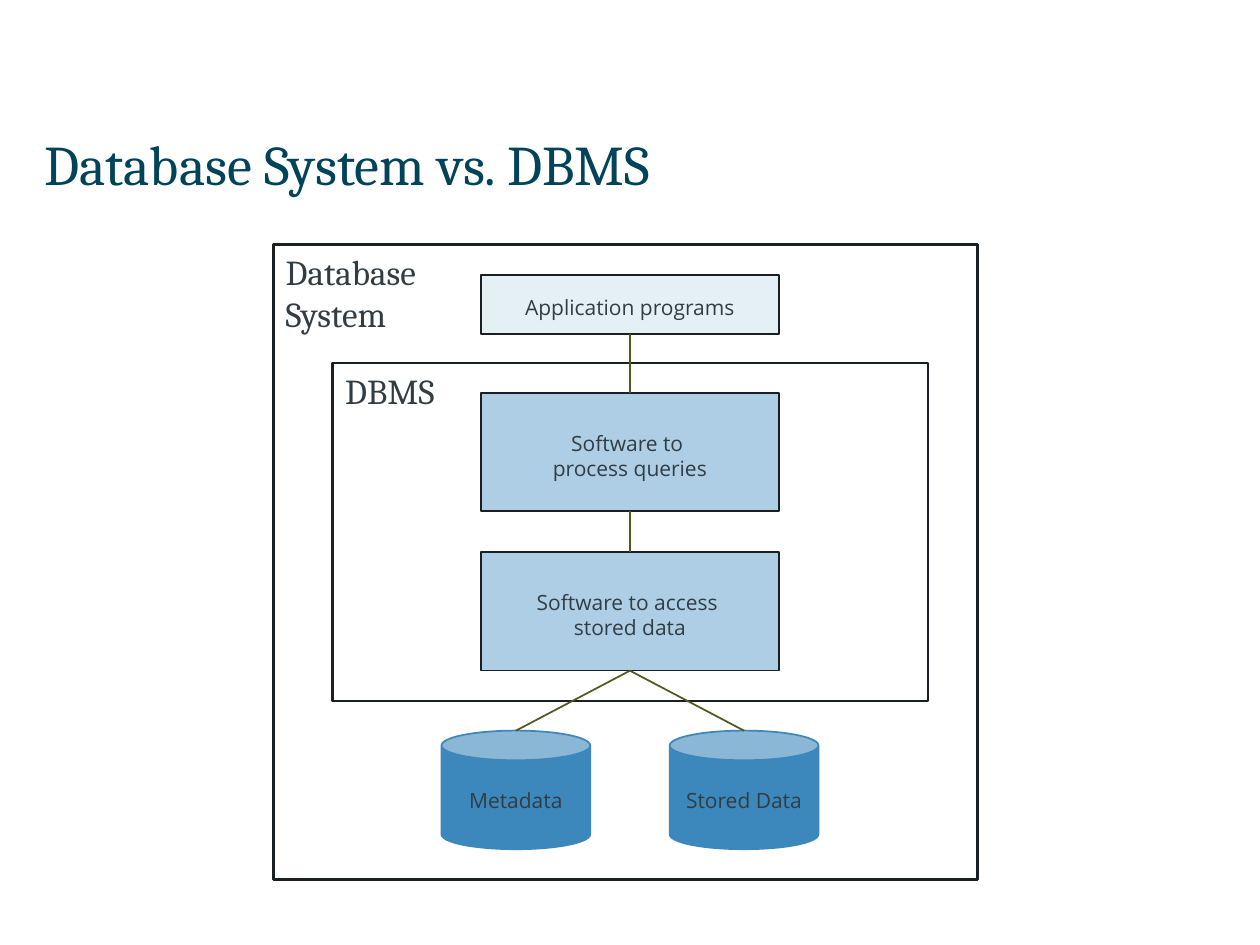
from pptx import Presentation
from pptx.dml.color import RGBColor
from pptx.enum.shapes import MSO_CONNECTOR, MSO_SHAPE
from pptx.enum.text import MSO_ANCHOR, PP_ALIGN
from pptx.oxml.ns import qn
from pptx.util import Cm, Pt
from lxml import etree

RECTANGLE, CAN = MSO_SHAPE.RECTANGLE, MSO_SHAPE.CAN
STRAIGHT = MSO_CONNECTOR.STRAIGHT
TOP, MIDDLE = MSO_ANCHOR.TOP, MSO_ANCHOR.MIDDLE
LEFT, CENTER = PP_ALIGN.LEFT, PP_ALIGN.CENTER
TOP_SITE, BOTTOM_SITE = 0, 2

TITLE_COLOR = RGBColor(0x01, 0x43, 0x59)
TEXT_COLOR = RGBColor(0x32, 0x3D, 0x43)
OUTLINE = RGBColor(0x19, 0x1F, 0x22)
PALE_BLUE = RGBColor(0xE4, 0xEF, 0xF6)
LIGHT_BLUE = RGBColor(0xAD, 0xCE, 0xE5)
STORE_BLUE = RGBColor(0x3C, 0x87, 0xBB)
STORE_OUTLINE = RGBColor(0x3D, 0x87, 0xBB)
LINK_COLOR = RGBColor(0x4F, 0x5A, 0x20)

SERIF, SANS = "Cambria", "Open Sans"

# Sizes in centimetres
CENTER_X = 12.7
BOX_WIDTH = 6
BLOCK_HEIGHT = 2.39
STORE_WIDTH = 3
STORE_OFFSET = 2.3


def set_text(shape, text, font, size, color, alignment, anchor, wrap=True):
    frame = shape.text_frame
    frame.text = text
    frame.word_wrap = wrap
    frame.vertical_anchor = anchor
    frame.margin_left = frame.margin_right = Cm(0.25)
    frame.margin_top, frame.margin_bottom = Cm(0.13), Cm(0)
    for paragraph in frame.paragraphs:
        paragraph.alignment = alignment
        for run in paragraph.runs:
            run.font.name = font
            run.font.size = Pt(size)
            run.font.color.rgb = color


def add_title(slide, text):
    box = slide.shapes.add_textbox(Cm(0.89), Cm(2.49), Cm(23.6), Cm(1.8))
    set_text(box, text, SERIF, 32, TITLE_COLOR, LEFT, TOP)
    box.text_frame.margin_left = Cm(0)


def add_outlined_shape(slide, kind, left, top, width, height, color, weight):
    shape = slide.shapes.add_shape(kind, Cm(left), Cm(top), Cm(width), Cm(height))
    shape.shadow.inherit = False
    shape.line.color.rgb = color
    shape.line.width = Pt(weight)
    return shape


def add_frame(slide, text, left, top, width, height):
    shape = add_outlined_shape(slide, RECTANGLE, left, top, width, height, OUTLINE, 1.5)
    shape.fill.background()
    set_text(shape, text, SERIF, 20, TEXT_COLOR, LEFT, TOP)


def add_node(slide, kind, text, center, top, width, height, fill, outline):
    shape = add_outlined_shape(
        slide, kind, center - width / 2, top, width, height, outline, 1)
    shape.fill.solid()
    shape.fill.fore_color.rgb = fill
    set_text(shape, text, SANS, 12, TEXT_COLOR, CENTER, MIDDLE, wrap=False)
    return shape


def add_link(slide, upper, lower, join_lower=True):
    """Line from the bottom middle of one shape to the top middle of the next."""
    link = slide.shapes.add_connector(
        STRAIGHT,
        upper.left + upper.width // 2, upper.top + upper.height,
        lower.left + lower.width // 2, lower.top)
    link.begin_connect(upper, BOTTOM_SITE)
    if join_lower:
        link.end_connect(lower, TOP_SITE)
    link.line.color.rgb = LINK_COLOR
    link.line.width = Pt(1)
    etree.SubElement(link._element.spPr, qn("a:effectLst"))


def main():
    presentation = Presentation()
    presentation.slide_width, presentation.slide_height = Cm(25.4), Cm(19.05)
    slide = presentation.slides.add_slide(presentation.slide_layouts[6])

    # Nested system frames
    add_frame(slide, "Database\vSystem", 5.51, 4.93, 14.2, 12.8)
    add_frame(slide, "DBMS", 6.71, 7.32, 12, 6.81)
    add_title(slide, "Database System vs. DBMS")

    # Data stores, on either side of the centre line
    stores = [
        add_node(slide, CAN, text, CENTER_X + offset, 14.73,
                 STORE_WIDTH, BLOCK_HEIGHT, STORE_BLUE, STORE_OUTLINE)
        for text, offset in (("Metadata", -STORE_OFFSET), ("Stored Data", STORE_OFFSET))
    ]

    # Software layers, top to bottom
    layers = [
        add_node(slide, RECTANGLE, text, CENTER_X, top, BOX_WIDTH, height, fill, OUTLINE)
        for text, top, height, fill in (
            ("Application programs", 5.54, 1.19, PALE_BLUE),
            ("Software to \nprocess queries", 7.92, BLOCK_HEIGHT, LIGHT_BLUE),
            ("Software to access \nstored data", 11.13, BLOCK_HEIGHT, LIGHT_BLUE),
        )
    ]

    # Links between layers and down to the stores
    for upper, lower in zip(layers, layers[1:]):
        add_link(slide, upper, lower)
    for store in stores:
        add_link(slide, layers[-1], store, join_lower=False)

    presentation.save("out.pptx")


if __name__ == "__main__":
    main()
